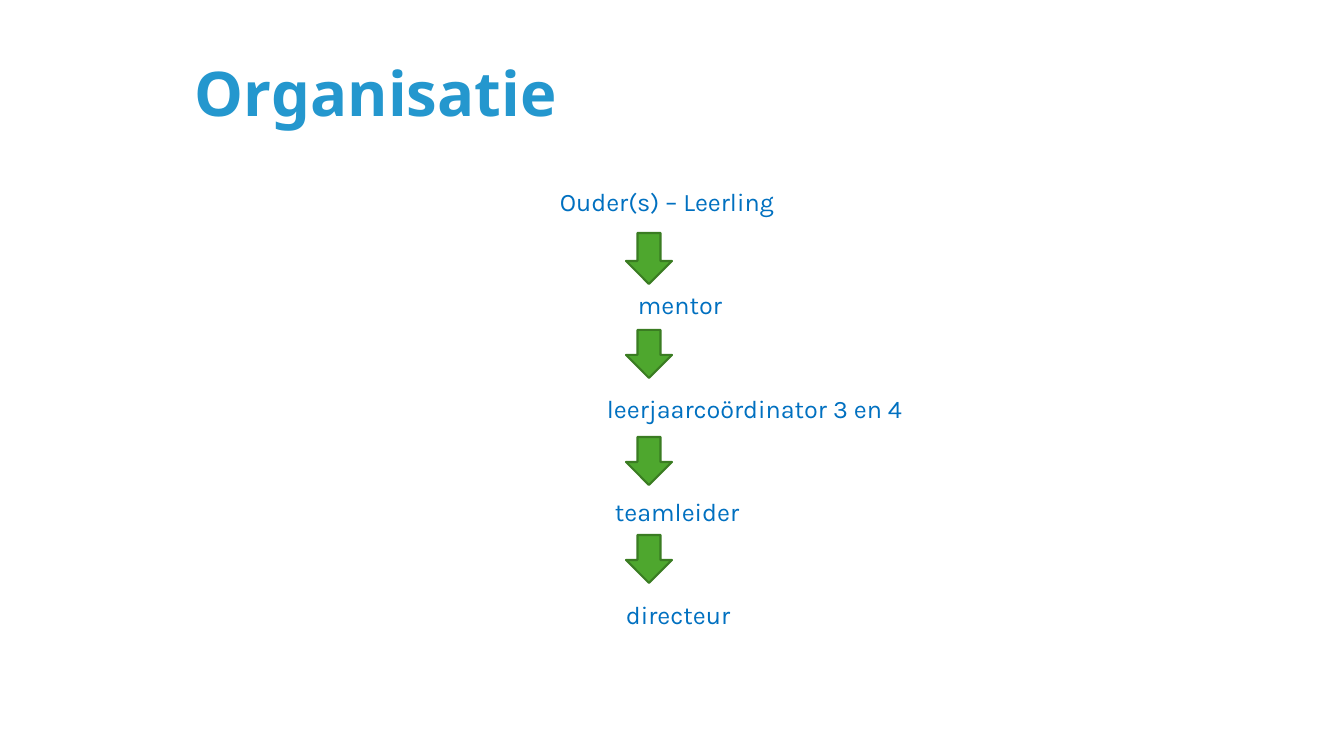
from pptx import Presentation
from pptx.dml.color import RGBColor
from pptx.enum.shapes import MSO_SHAPE as Shape
from pptx.enum.text import MSO_ANCHOR as Anchor
from pptx.util import Pt

SCALE = 914400 / 100.8
ROLES = [("Ouder(s) – Leerling", 365), ("mentor", 443),
         ("leerjaarcoördinator 3 en 4", 412), ("teamleider", 420),
         ("directeur", 431)]
ARROWS = [(233, 51), (330, 48), (437, 48), (535, 48)]


def px(n):
    """Turn pixels into EMU."""
    return round(n * SCALE)


def color(code):
    """Turn a hex string into a colour."""
    return RGBColor.from_string(code)


def add_box(slide, x, y, w, h, anchor=Anchor.TOP):
    """Add a wrapping text box and return its frame."""
    frame = slide.shapes.add_textbox(px(x), px(y), px(w), px(h)).text_frame
    frame.word_wrap = True
    frame.vertical_anchor = anchor
    return frame


def set_line(para, text, name, size, code, bold=False):
    """Fill one paragraph with styled text."""
    para.text = text
    para.line_spacing = 0.9
    font = para.font
    font.name, font.size, font.bold = name, Pt(size), bold
    font.color.rgb = color(code)


def add_roles(slide):
    """List the roles, each with its own indent."""
    frame = add_box(slide, 185, 185, 1096, 477)
    for i, (role, left) in enumerate(ROLES):
        para = frame.add_paragraph() if i else frame.paragraphs[0]
        props = para._p.get_or_add_pPr()
        props.set("marL", str(px(left)))
        props.set("indent", "0")
        set_line(para, role, "Karla", 18, "0070C0")
        if i:
            para.space_before = Pt(54.3)


def add_arrow(slide, y, h):
    """Add a green arrow pointing down."""
    arrow = slide.shapes.add_shape(Shape.DOWN_ARROW, px(626), px(y), px(46), px(h))
    arrow.shadow.inherit = False
    arrow.fill.solid()
    arrow.fill.fore_color.rgb = color("4EA72E")
    arrow.line.color.rgb = color("3A7C22")
    arrow.line.width = Pt(1.5)


def main():
    """Build and save the slide."""
    deck = Presentation()
    deck.slide_width, deck.slide_height = px(1344), px(756)
    slide = deck.slides.add_slide(deck.slide_layouts[6])
    title = add_box(slide, 185, 35, 1096, 124, Anchor.MIDDLE)
    set_line(title.paragraphs[0], "Organisatie", "Noto Sans", 44, "2497CE", True)
    add_roles(slide)
    for y, h in ARROWS:
        add_arrow(slide, y, h)
    deck.save("out.pptx")


if __name__ == "__main__":
    main()
